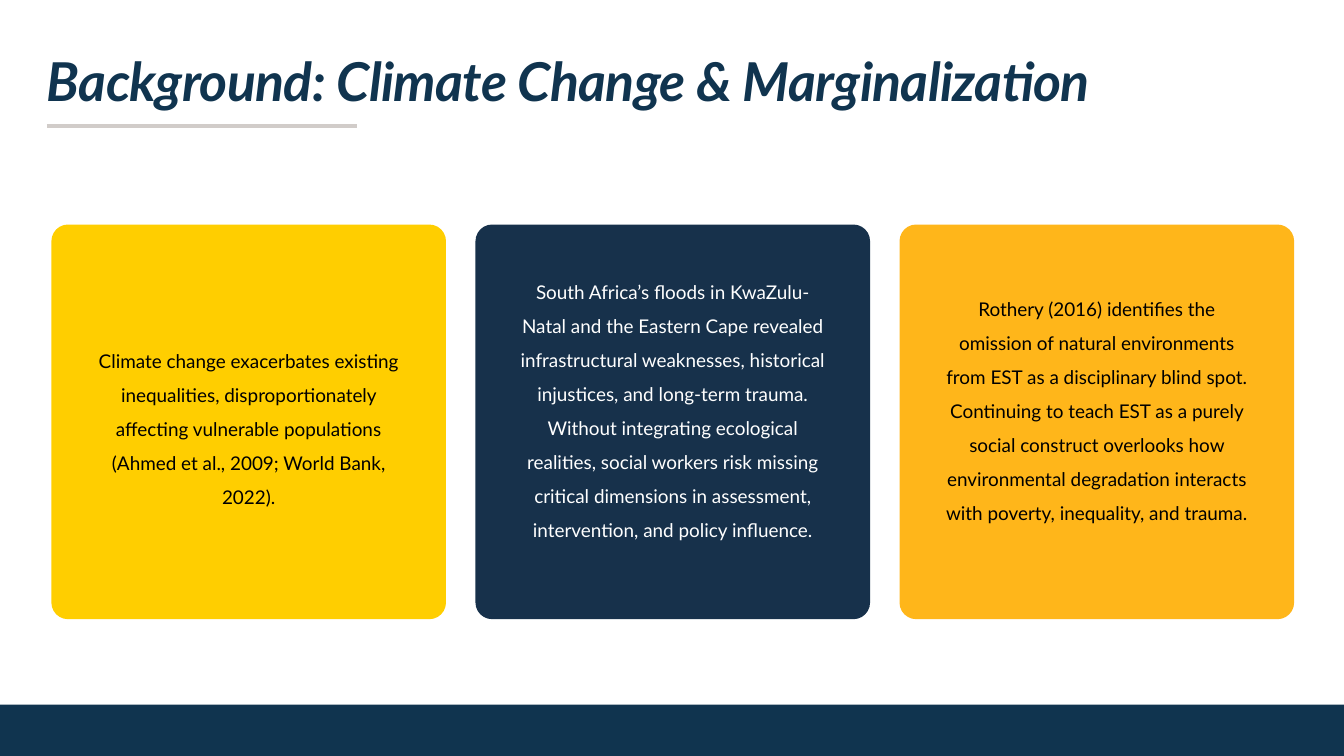
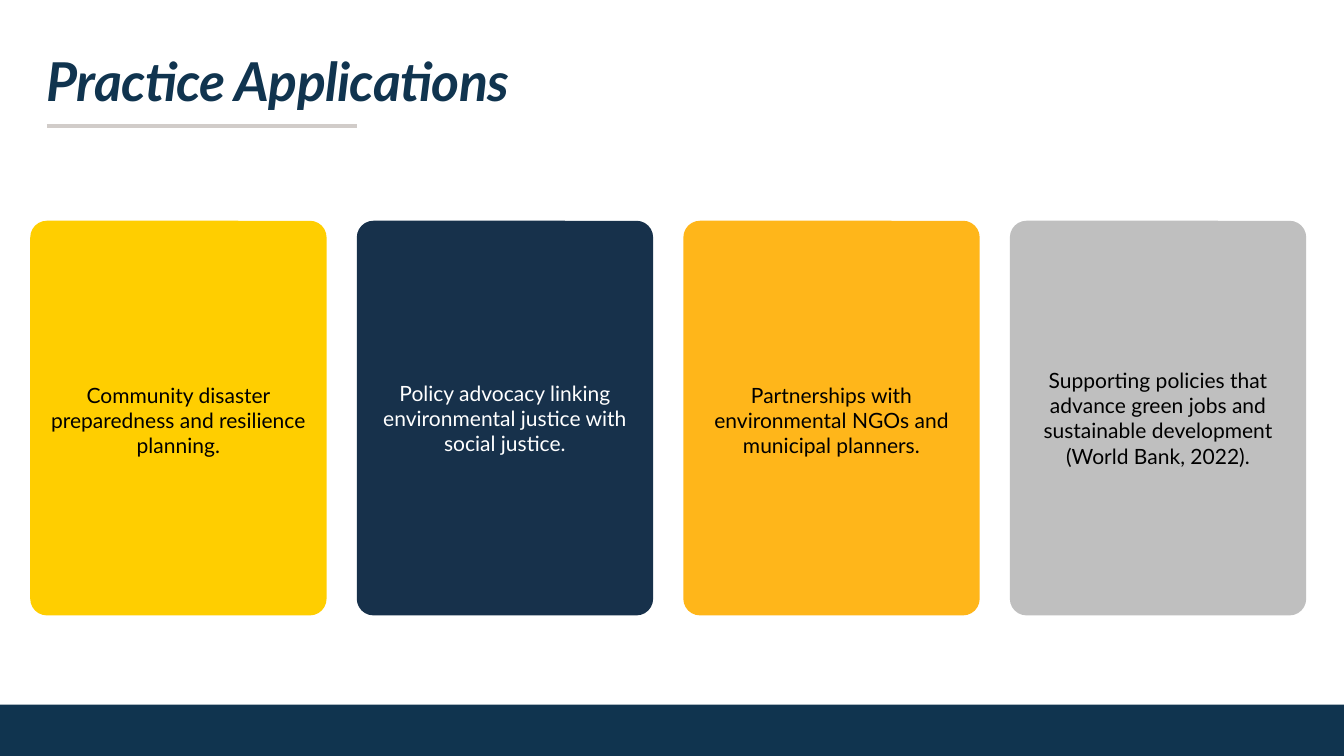
import pptx
import pptx.util
import pptx.dml.color
import pptx.enum.shapes
import pptx.enum.text
import pptx.oxml.ns
import lxml.etree

Inches = pptx.util.Inches
Pt = pptx.util.Pt
qn = pptx.oxml.ns.qn
WIDE, HIGH = 17.78, 10
FONT = "Lato"
RADIUS = 0.22
INK = {
    "navy": "10344F",
    "rule": "D1CCC9",
    "gold": "FFCE00",
    "deep": "17314B",
    "amber": "FFB61A",
    "grey": "BFBFBF",
    "black": "000000",
    "white": "FFFFFF",
}


def tint(name):
    """Return the named colour."""
    return pptx.dml.color.RGBColor.from_string(INK[name])


def add_block(slide, kind, box, fill):
    """Add a plain filled shape."""
    shape = slide.shapes.add_shape(kind, *map(Inches, box))
    shape.shadow.inherit = False
    shape.fill.solid()
    shape.fill.fore_color.rgb = tint(fill)
    shape.line.fill.background()
    return shape


def add_text(slide, box, words, size, color):
    """Add a one-paragraph text box and return its paragraph."""
    frame = slide.shapes.add_textbox(*map(Inches, box)).text_frame
    frame.word_wrap = True
    frame.margin_left = frame.margin_right = frame.margin_bottom = 0
    frame.margin_top = Inches(0.01)
    para = frame.paragraphs[0]
    para.text = words
    para.font.name = FONT
    para.font.size = Pt(size)
    para.font.color.rgb = tint(color)
    return para


def add_head(slide, title):
    """Add the title and the rule below it."""
    left, top, rule = 0.62, 0.62, 1.67
    line = slide.shapes.add_connector(
        pptx.enum.shapes.MSO_CONNECTOR.STRAIGHT,
        Inches(left), Inches(rule), Inches(left + 4.1), Inches(rule))
    line.line.color.rgb = tint("rule")
    line.line.width = Pt(4)
    lxml.etree.SubElement(line._element.spPr, qn("a:effectLst"))
    para = add_text(slide, (left, top, 15.89, 0.87), title, 51, "navy")
    para.font.bold = para.font.italic = True
    para._p.pPr.find(qn("a:defRPr")).set("spc", "-60")


def add_card(slide, box, fill, words, drop, pad, size, space):
    """Add a rounded card with its text set in by pad and down by drop."""
    left, top, width, height = box
    card = add_block(slide, pptx.enum.shapes.MSO_SHAPE.ROUNDED_RECTANGLE, box, fill)
    card.adjustments[0] = RADIUS / min(width, height)
    area = left + pad, top + drop, width - 2 * pad, height - 2 * drop
    color = "white" if fill == "deep" else "black"
    para = add_text(slide, area, words, size, color)
    para.alignment = pptx.enum.text.PP_ALIGN.CENTER
    para.line_spacing = space


def add_page(deck, title, row, pitch, pad, size, space, cards):
    """Add a slide with a title, a row of cards and the bottom band."""
    slide = deck.slides.add_slide(deck.slide_layouts[6])
    add_block(slide, pptx.enum.shapes.MSO_SHAPE.RECTANGLE,
              (0, 9.32, WIDE, HIGH - 9.32), "navy")
    add_head(slide, title)
    left, top, width, height = row
    for i, (fill, drop, words) in enumerate(cards):
        box = left + i * pitch, top, width, height
        add_card(slide, box, fill, words, drop, pad, size, space)


def main():
    """Build the deck and save it."""
    deck = pptx.Presentation()
    deck.slide_width, deck.slide_height = Inches(WIDE), Inches(HIGH)
    add_page(
        deck, "Background: Climate Change & Marginalization",
        (0.68, 2.97, 5.22, 5.22), 5.61, 0.59, 18, 1.5, [
            ("gold", 1.49,
             "Climate change exacerbates existing inequalities, "
             "disproportionately affecting vulnerable populations "
             "(Ahmed et al., 2009; World Bank, 2022)."),
            ("deep", 0.58,
             "South Africa’s floods in KwaZulu-Natal and the Eastern Cape "
             "revealed infrastructural weaknesses, historical injustices, "
             "and long-term trauma. Without integrating ecological realities, "
             "social workers risk missing critical dimensions in assessment, "
             "intervention, and policy influence."),
            ("amber", 0.81,
             "Rothery (2016) identifies the omission of natural environments "
             "from EST as a disciplinary blind spot. Continuing to teach EST "
             "as a purely social construct overlooks how environmental "
             "degradation interacts with poverty, inequality, and trauma."),
        ])
    add_page(
        deck, "Practice Applications",
        (0.4, 2.92, 3.92, 5.22), 4.32, 0.18, 20, 1.0, [
            ("gold", 2.13,
             "Community disaster preparedness and resilience planning."),
            ("deep", 2.1,
             "Policy advocacy linking environmental justice with social justice."),
            ("amber", 2.13,
             "Partnerships with environmental NGOs and municipal planners."),
            ("grey", 1.93,
             "Supporting policies that advance green jobs and sustainable "
             "development (World Bank, 2022)."),
        ])
    deck.save("out.pptx")


if __name__ == "__main__":
    main()
